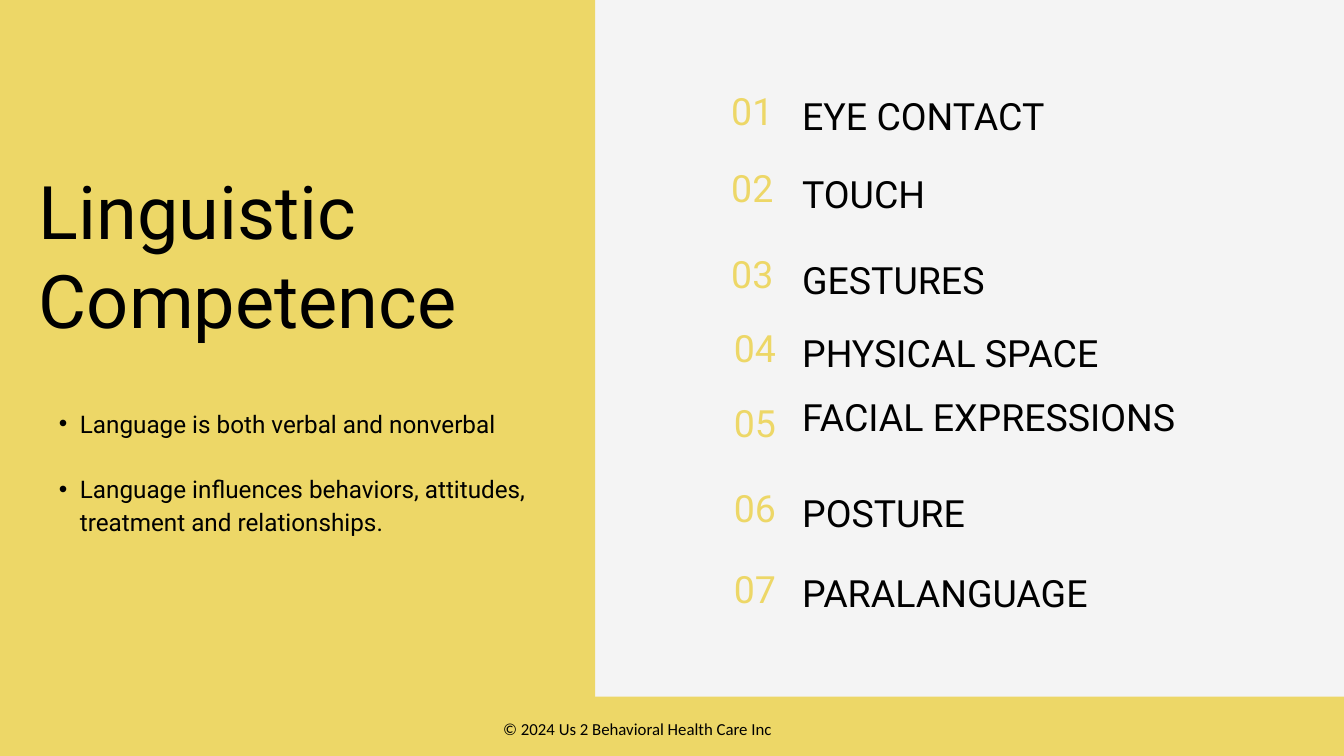
from lxml import etree
from pptx import Presentation
from pptx.dml.color import RGBColor
from pptx.enum.shapes import MSO_SHAPE as Shape
from pptx.enum.text import MSO_ANCHOR as Anchor, MSO_AUTO_SIZE as AutoSize, PP_ALIGN as Align
from pptx.oxml.ns import qn
from pptx.util import Cm, Pt

YELLOW, BLACK, GREY = "EDD767", "000000", "F4F4F4"


def paint(target, color):
    """Give a fill a solid colour."""
    target.solid()
    target.fore_color.rgb = RGBColor.from_string(color)


def write(frame, text, size, font="Roboto", color=BLACK, line=None,
          before=None, bullet=False, margin=0):
    """Write text in the empty first paragraph, or in a new one."""
    frame.word_wrap = True
    frame.auto_size = AutoSize.NONE
    frame.vertical_anchor = Anchor.TOP
    frame.margin_left = frame.margin_right = Cm(margin)
    frame.margin_top = frame.margin_bottom = Cm(margin / 2)
    para = frame.paragraphs[0] if not frame.text else frame.add_paragraph()
    para.alignment = Align.LEFT
    if line:
        para.line_spacing = Pt(line)
    if before:
        para.space_before = Pt(before)
    if bullet:
        props = para._p.get_or_add_pPr()
        props.set("marL", str(Cm(1.55)))
        props.set("indent", str(Cm(-0.79)))
        etree.SubElement(props, qn("a:buFont")).set("typeface", "Arial")
        etree.SubElement(props, qn("a:buChar")).set("char", "•")
    span = para.add_run()
    span.text = text
    span.font.name = font
    span.font.size = Pt(size)
    paint(span.font.fill, color)


deck = Presentation()
deck.slide_width, deck.slide_height = Cm(50.8), Cm(28.58)
page = deck.slides.add_slide(deck.slide_layouts[5])
paint(page.background.fill, GREY)
title = page.shapes.title

# Yellow panel on the left and band along the bottom
for left, top, width, height in [(0, 0, 22.5, 28.58), (0, 26.34, 50.8, 2.24)]:
    panel = page.shapes.add_shape(Shape.RECTANGLE, Cm(left), Cm(top), Cm(width), Cm(height))
    panel.shadow.inherit = False
    paint(panel.fill, YELLOW)
    panel.line.fill.background()

# Title, brought in front of the panels
panel.element.addnext(title.element)
title.left, title.top, title.width, title.height = Cm(1.47), Cm(6.27), Cm(19.35), Cm(6.71)
write(title.text_frame, "Linguistic Competence", 79.2, line=95)

# Bullets below the title
box = page.shapes.add_textbox(Cm(1.47), Cm(15.32), Cm(19.35), Cm(4.83))
write(box.text_frame, "Language is both verbal and nonverbal", 26, line=35.1, bullet=True)
write(box.text_frame, "Language influences behaviors, attitudes, treatment and relationships.",
      26, line=35.1, before=35.1, bullet=True)

# Numbered topics: label, number left, number top, label top, label line spacing
topics = [
    ("EYE CONTACT", 27.64, 3.33, 3.07, 60.4),
    ("TOUCH", 27.64, 6.25, 6.05, 60.4),
    ("GESTURES", 27.64, 9.5, 9.27, 60.4),
    ("PHYSICAL SPACE", 27.74, 12.27, 12.04, 60.4),
    ("FACIAL EXPRESSIONS", 27.74, 15.11, 15.37, 34.6),
    ("POSTURE", 27.74, 18.34, 18.08, 60.4),
    ("PARALANGUAGE", 27.74, 21.39, 21.13, 60.4),
]
for number, (label, left, number_top, label_top, spacing) in enumerate(topics, 1):
    box = page.shapes.add_textbox(Cm(left), Cm(number_top), Cm(2.4), Cm(1.73))
    write(box.text_frame, f"{number:02}", 40.2, color=YELLOW, line=48.3)
    width = 14.66 if len(label) > 15 else 12.5 if len(label) > 11 else 10.8
    box = page.shapes.add_textbox(Cm(30.32), Cm(label_top), Cm(width), Cm(1.95))
    write(box.text_frame, label, 40.2, line=spacing)

# Copyright line
box = page.shapes.add_textbox(Cm(18.77), Cm(27.05), Cm(12.07), Cm(1.5))
write(box.text_frame, "© 2024 Us 2 Behavioral Health Care Inc", 18, font="Calibri", margin=0.25)

deck.save("out.pptx")
